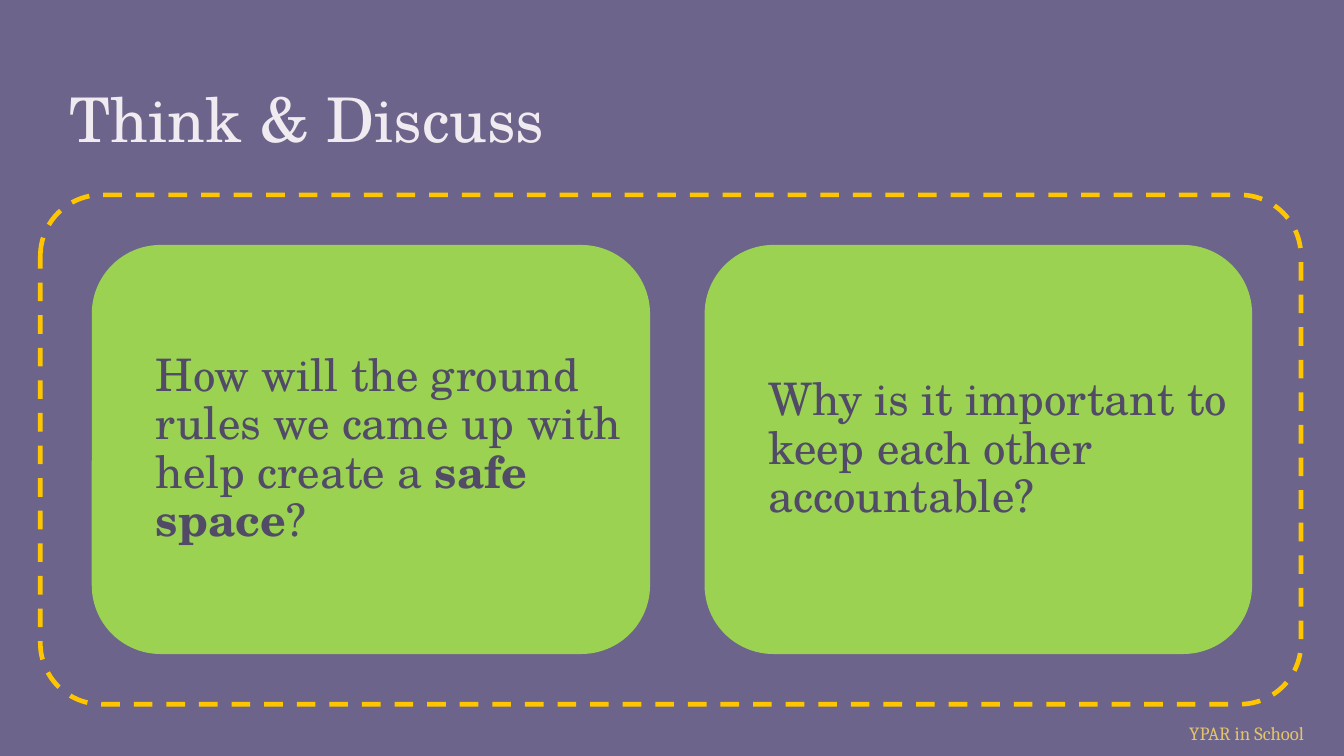
from pptx import Presentation
from pptx.dml.color import RGBColor
from pptx.enum.dml import MSO_LINE
from pptx.enum.shapes import MSO_SHAPE
from pptx.enum.text import MSO_ANCHOR
from pptx.util import Inches, Pt

ROUNDED = MSO_SHAPE.ROUNDED_RECTANGLE
DASH = MSO_LINE.DASH
TOP, MIDDLE, BOTTOM = MSO_ANCHOR.TOP, MSO_ANCHOR.MIDDLE, MSO_ANCHOR.BOTTOM

PURPLE = RGBColor(0x6C, 0x64, 0x8B)
PALE = RGBColor(0xF0, 0xEB, 0xF0)
GREEN = RGBColor(0x9B, 0xD2, 0x52)
DARK = RGBColor(0x51, 0x4B, 0x68)
YELLOW = RGBColor(0xFF, 0xC6, 0x00)
SAND = RGBColor(0xE4, 0xC4, 0x69)
SERIF = "TeX Gyre Schola"

TITLE = "Think & Discuss"
FOOTER = "YPAR in School"
CARDS = [
    (0.69, 4.14, [
        ("How will the ground rules we came up with help create a ", False),
        ("safe space", True),
        ("?", False),
    ]),
    (5.25, 4.06, [
        ("Why is it important to keep each other accountable?", False),
    ]),
]
CARD_TOP, CARD_HEIGHT = 1.83, 3.03
PAD = 0.15


def add_box(s, x, y, w, h, line_color, line_width, fill=None):
    sp = s.shapes.add_shape(ROUNDED, Inches(x), Inches(y), Inches(w), Inches(h))
    sp.shadow.inherit = False
    if fill is None:
        sp.fill.background()
    else:
        sp.fill.solid()
        sp.fill.fore_color.rgb = fill
    sp.line.color.rgb = line_color
    sp.line.width = Pt(line_width)
    return sp


def add_text(s, x, y, w, h, runs, size, color, font, anchor, inset_x, inset_y, wrap=True):
    tf = s.shapes.add_textbox(Inches(x), Inches(y), Inches(w), Inches(h)).text_frame
    tf.word_wrap = wrap
    tf.vertical_anchor = anchor
    tf.margin_left = tf.margin_right = Inches(inset_x)
    tf.margin_top = tf.margin_bottom = Inches(inset_y)
    p = tf.paragraphs[0]
    for text, bold in runs:
        r = p.add_run()
        r.text = text
        r.font.name = font
        r.font.size = Pt(size)
        r.font.bold = bold
        r.font.color.rgb = color
    return p


prs = Presentation()
prs.slide_width = Inches(10)
prs.slide_height = prs.slide_width * 9 // 16
s = prs.slides.add_slide(prs.slide_layouts[6])
s.background.fill.solid()
s.background.fill.fore_color.rgb = PURPLE

add_text(s, 8.75, 5.32, 1.2, 0.27, [(FOOTER, False)], 10, SAND, "Cambria", TOP, 0.1, 0.05, False)
add_text(s, 0.42, 0.5, 9.15, 0.75, [(TITLE, False)], 33, PALE, SERIF, BOTTOM, 0.1, 0.1)

for x, w, runs in CARDS:
    add_box(s, x, CARD_TOP, w, CARD_HEIGHT, GREEN, 1, GREEN)
    p = add_text(s, x + PAD, CARD_TOP + PAD, w - 2 * PAD, CARD_HEIGHT - 2 * PAD,
                 runs, 24, DARK, SERIF, MIDDLE, 0.02, 0.02)
    p.line_spacing = 0.9
    p._p.get_or_add_pPr().set("marL", str(Inches(0.3)))

frame = add_box(s, 0.3, 1.45, 9.38, 3.79, YELLOW, 2.5)
frame.adjustments[0] = 0.12
frame.line.dash_style = DASH

prs.save("out.pptx")
